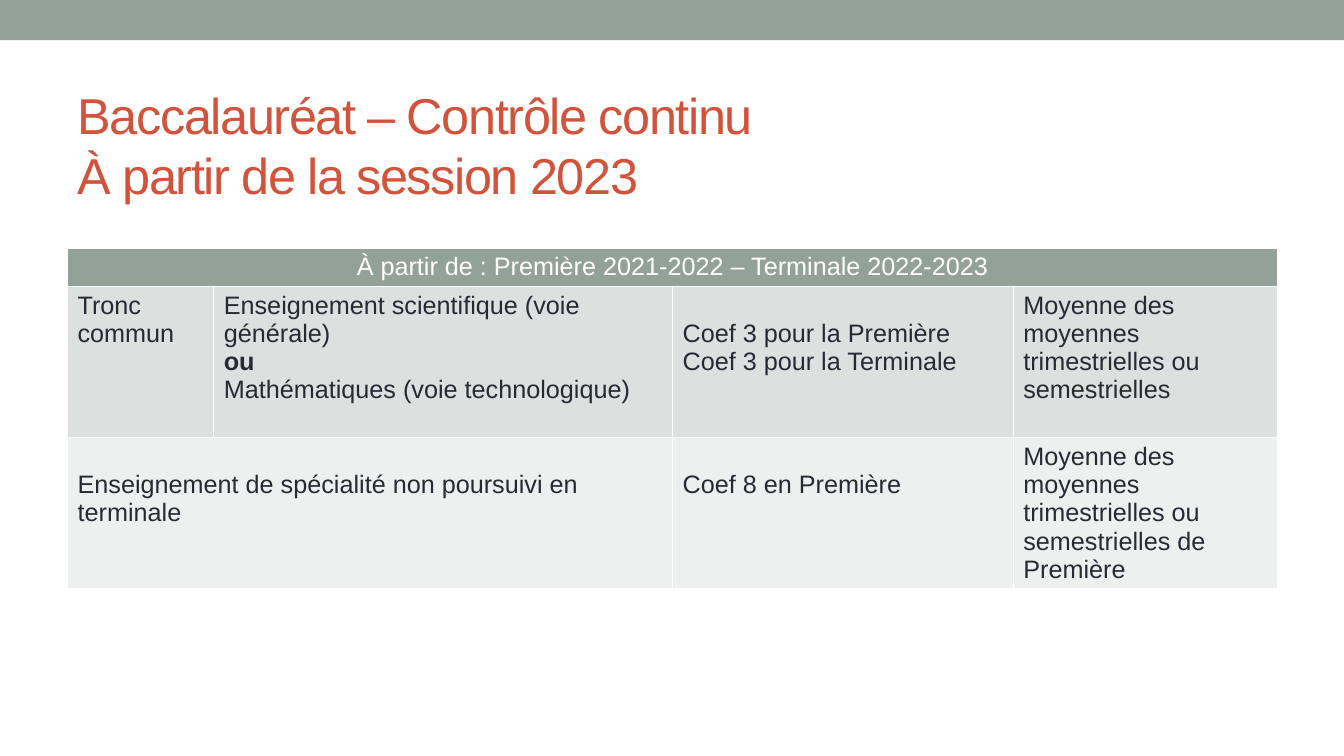
"""Builds the slide on continuous assessment for the Baccalauréat."""
import pptx
import pptx.dml.color
import pptx.enum.shapes
import pptx.enum.text
import pptx.oxml
import pptx.oxml.ns
import pptx.util

Inches = pptx.util.Inches
Pt = pptx.util.Pt
FONT = "Arial"
COLOURS = {
    "sage": "93A299",
    "brick": "D2533C",
    "ink": "292934",
    "white": "FFFFFF",
    "band_dark": "DCE0DE",
    "band_light": "EEF0EF",
}
COLUMN_WIDTHS = [1.45, 4.55, 3.38, 2.62]
ROW_HEIGHTS = [0.37, 1.5, 1.5]
ONE_LINE_DOWN = 0.33


def rgb(name):
    return pptx.dml.color.RGBColor.from_string(COLOURS[name])


def add_run(paragraph, text, size, colour, bold=False):
    run = paragraph.add_run()
    run.text = text
    run.font.name = FONT
    run.font.size = Pt(size)
    run.font.bold = bold
    run.font.color.rgb = rgb(colour)
    return run


def add_top_band(slide):
    band = slide.shapes.add_shape(
        pptx.enum.shapes.MSO_SHAPE.RECTANGLE, 0, 0, Inches(13.33), Inches(0.4))
    band.shadow.inherit = False
    band.fill.solid()
    band.fill.fore_color.rgb = rgb("sage")
    band.line.fill.background()


def fill_title(slide, lines):
    title = slide.shapes.title
    title.left, title.top = Inches(0.67), Inches(0.89)
    title.width, title.height = Inches(12), Inches(1.08)
    frame = title.text_frame
    frame.word_wrap = True
    frame.auto_size = pptx.enum.text.MSO_AUTO_SIZE.NONE
    frame.vertical_anchor = pptx.enum.text.MSO_ANCHOR.MIDDLE
    paragraph = frame.paragraphs[0]
    paragraph.alignment = pptx.enum.text.PP_ALIGN.LEFT
    for index, line in enumerate(lines):
        if index:
            paragraph.add_line_break()
        run = add_run(paragraph, line, 36, "brick")
        run.font._element.set("spc", "-100")


def set_borders(cell):
    properties = cell._tc.get_or_add_tcPr()
    for index, side in enumerate(("lnL", "lnR", "lnT", "lnB")):
        border = pptx.oxml.parse_xml(
            f'<a:{side} {pptx.oxml.ns.nsdecls("a")} w="12700"><a:solidFill>'
            f'<a:srgbClr val="{COLOURS["white"]}"/></a:solidFill></a:{side}>')
        properties.insert(index, border)


def fill_cell(cell, lines, colour="ink", centred=False, top=0.05):
    cell.margin_top = Inches(top)
    for index, line in enumerate(lines):
        frame = cell.text_frame
        paragraph = frame.add_paragraph() if index else frame.paragraphs[0]
        if centred:
            paragraph.alignment = pptx.enum.text.PP_ALIGN.CENTER
        add_run(paragraph, line, 18, colour, bold=line == "ou")


def add_grid(slide):
    frame = slide.shapes.add_table(
        len(ROW_HEIGHTS), len(COLUMN_WIDTHS), Inches(0.67), Inches(2.46),
        Inches(sum(COLUMN_WIDTHS)), Inches(sum(ROW_HEIGHTS)))
    table = frame.table
    for column, width in zip(table.columns, COLUMN_WIDTHS):
        column.width = Inches(width)
    fills = ("sage", "band_dark", "band_light")
    for row, height, fill in zip(table.rows, ROW_HEIGHTS, fills):
        row.height = Inches(height)
        for cell in row.cells:
            cell.fill.solid()
            cell.fill.fore_color.rgb = rgb(fill)
            set_borders(cell)
    table.cell(0, 0).merge(table.cell(0, 3))
    table.cell(2, 0).merge(table.cell(2, 1))
    return table


def fill_grid(table):
    fill_cell(table.cell(0, 0),
              ["À partir de : Première 2021-2022 – Terminale 2022-2023"],
              colour="white", centred=True)
    average = "Moyenne des moyennes trimestrielles ou semestrielles"
    fill_cell(table.cell(1, 0), ["Tronc commun"])
    fill_cell(table.cell(1, 1), ["Enseignement scientifique (voie générale)", "ou",
                                 "Mathématiques (voie technologique)"])
    fill_cell(table.cell(1, 2), ["Coef 3 pour la Première", "Coef 3 pour la Terminale"],
              top=ONE_LINE_DOWN)
    fill_cell(table.cell(1, 3), [average])
    fill_cell(table.cell(2, 0), ["Enseignement de spécialité non poursuivi en terminale"],
              top=ONE_LINE_DOWN)
    fill_cell(table.cell(2, 2), ["Coef 8 en Première"], top=ONE_LINE_DOWN)
    fill_cell(table.cell(2, 3), [average + " de Première"])


def main():
    presentation = pptx.Presentation()
    presentation.slide_width = Inches(13.33)
    presentation.slide_height = Inches(7.5)
    slide = presentation.slides.add_slide(presentation.slide_layouts[5])
    add_top_band(slide)
    fill_title(slide, ["Baccalauréat – Contrôle continu", "À partir de la session 2023"])
    fill_grid(add_grid(slide))
    presentation.save("out.pptx")


if __name__ == "__main__":
    main()
